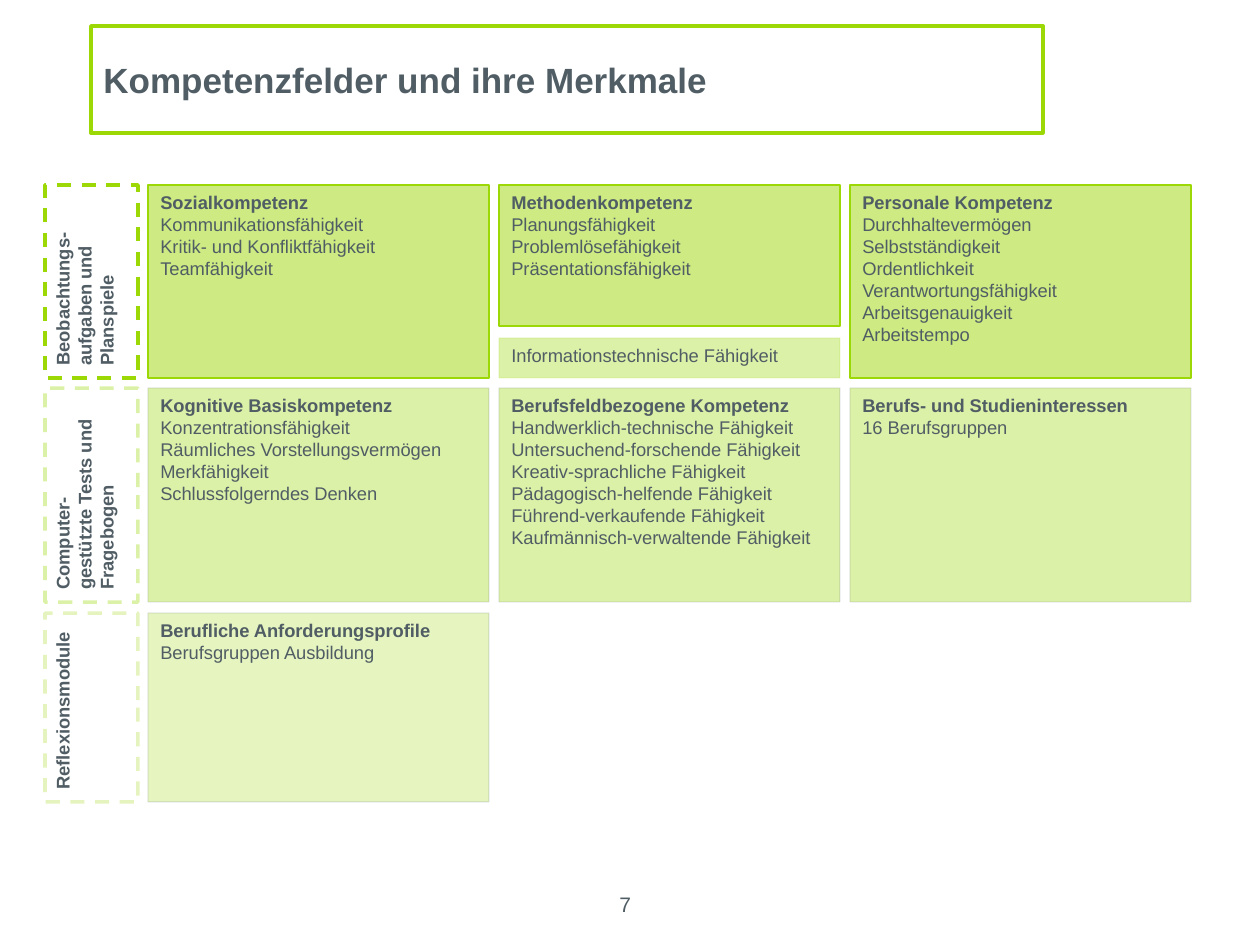
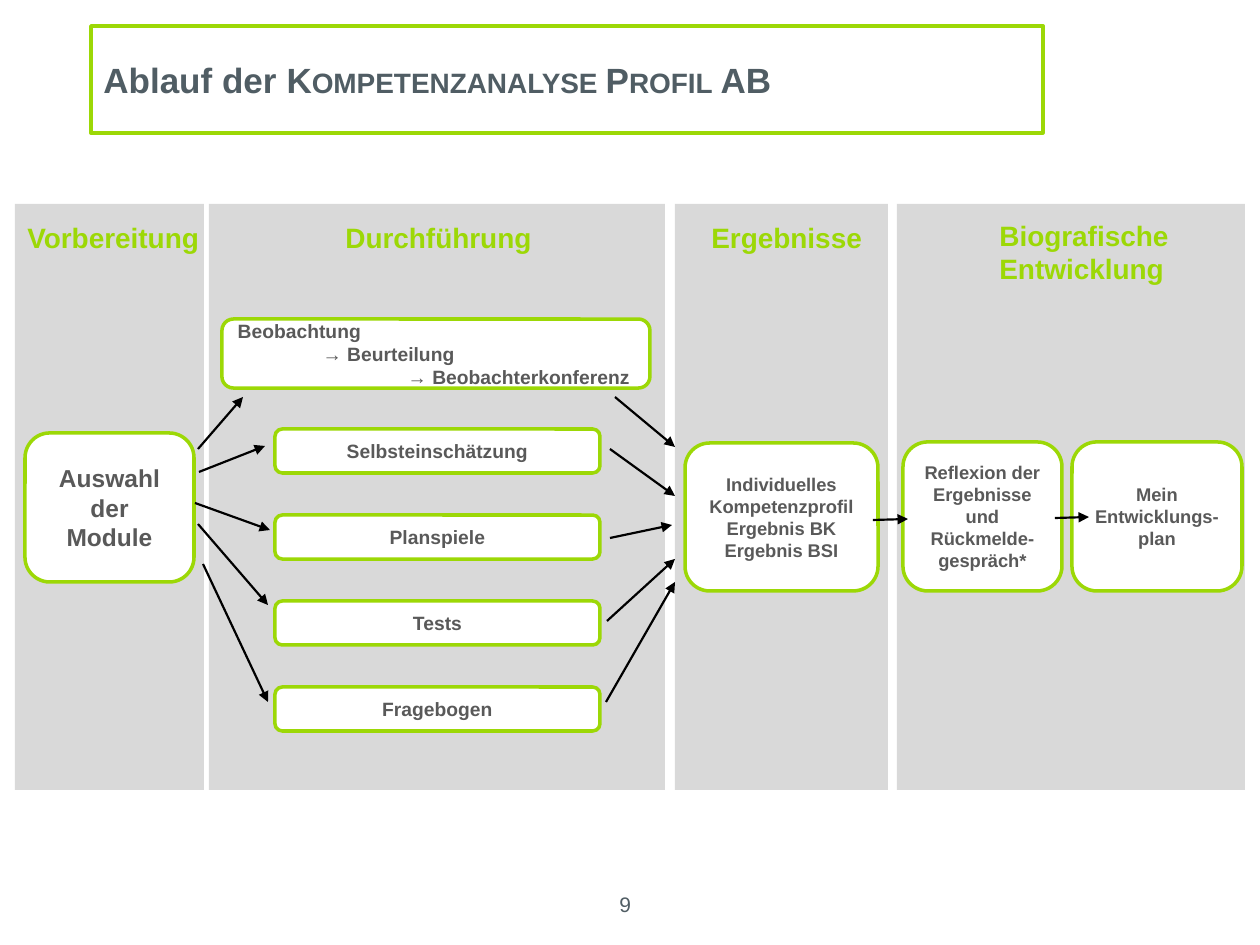
from lxml import etree
from pptx import Presentation
from pptx import util as u
from pptx.dml.color import RGBColor
from pptx.enum import dml, shapes, text
from pptx.oxml.ns import qn

SCALE = 914400 / 126  # EMU in one px
FONT = "Arial"
HUES = {
    "green": "9CD806",
    "slate": "505D64",
    "grey": "595959",
    "panel": "D9D9D9",
    "white": "FFFFFF",
    "black": "000000",
}
RECT = shapes.MSO_SHAPE.RECTANGLE
ROUND = shapes.MSO_SHAPE.ROUNDED_RECTANGLE
LEFT, MID = text.PP_ALIGN.LEFT, text.PP_ALIGN.CENTER
TOP, CENTRE = text.MSO_ANCHOR.TOP, text.MSO_ANCHOR.MIDDLE


def px(num):
    return u.Emu(round(num * SCALE))


def rgb(hue):
    return RGBColor.from_string(HUES[hue])


def paint(fill, root, route, hue, alpha=100):
    """Solid colour, with an opacity in percent."""
    fill.solid()
    fill.fore_color.rgb = rgb(hue)
    if alpha < 100:
        names = [qn("a:" + name) for name in route + ["solidFill", "srgbClr"]]
        tag = etree.SubElement(root.find("/".join(names)), qn("a:alpha"))
        tag.set("val", str(alpha * 1000))


def add_box(sld, box, kind=RECT, fill=None, edge=None, width=2, dash=False):
    """Shape in a px box; fill and edge are (colour, opacity) or None."""
    shape = sld.shapes.add_shape(kind, *map(px, box))
    shape.shadow.inherit = False
    root = shape._element.spPr
    if fill:
        paint(shape.fill, root, [], *fill)
    else:
        shape.fill.background()
    if edge:
        paint(shape.line.fill, root, ["ln"], *edge)
        shape.line.width = u.Pt(width)
        if dash:
            shape.line.dash_style = dml.MSO_LINE.DASH
    else:
        shape.line.fill.background()
    return shape


def write(shape, lines, size, hue, bold=True, align=LEFT, anchor=TOP, step=0):
    """One paragraph a line; step indents each line further than the last."""
    frame = shape.text_frame
    frame.word_wrap = True
    frame.vertical_anchor = anchor
    runs = []
    for i, line in enumerate(lines):
        para = frame.add_paragraph() if i else frame.paragraphs[0]
        para.alignment = align
        if step:
            para._p.get_or_add_pPr().set("marL", str(px(step * i)))
        runs.append(add_run(para, line, size, hue, bold))
    return runs


def add_run(para, words, size, hue, bold):
    run = para.add_run()
    run.text = words
    run.font.name, run.font.size, run.font.bold = FONT, u.Pt(size), bold
    run.font.color.rgb = rgb(hue)
    return run


def add_page(prs, title, number, small=""):
    """Blank slide with title frame and page number."""
    sld = prs.slides.add_slide(prs.slide_layouts[6])
    head = add_box(sld, (91, 26, 952, 107), edge=("green",))
    write(head, [title], 20, "slate", anchor=CENTRE)
    if small:
        run = add_run(head.text_frame.paragraphs[0], small, 20, "slate", True)
        run._r.get_or_add_rPr().set("cap", "small")
    foot = add_box(sld, (607, 882, 77, 45))
    write(foot, [number], 12, "slate", bold=False, anchor=CENTRE)
    return sld


# Fields of competence: label, top, height, opacity, cells
ROWS = [
    (["Beobachtungs-aufgaben und Planspiele"], 0, 193, 50, [
        ["Sozialkompetenz", "Kommunikationsfähigkeit",
         "Kritik- und Konfliktfähigkeit", "Teamfähigkeit"],
        ["Methodenkompetenz", "Planungsfähigkeit", "Problemlösefähigkeit",
         "Präsentationsfähigkeit"],
        ["Personale Kompetenz", "Durchhaltevermögen", "Selbstständigkeit",
         "Ordentlichkeit", "Verantwortungsfähigkeit", "Arbeitsgenauigkeit",
         "Arbeitstempo"]]),
    (["Computer-", "gestützte Tests und Fragebogen"], 203, 214, 35, [
        ["Kognitive Basiskompetenz", "Konzentrationsfähigkeit",
         "Räumliches Vorstellungsvermögen", "Merkfähigkeit",
         "Schlussfolgerndes Denken"],
        ["Berufsfeldbezogene Kompetenz", "Handwerklich-technische Fähigkeit",
         "Untersuchend-forschende Fähigkeit", "Kreativ-sprachliche Fähigkeit",
         "Pädagogisch-helfende Fähigkeit", "Führend-verkaufende Fähigkeit",
         "Kaufmännisch-verwaltende Fähigkeit"],
        ["Berufs- und Studieninteressen", "16 Berufsgruppen"]]),
    (["Reflexionsmodule"], 428, 189, 25, [
        ["Berufliche Anforderungsprofile", "Berufsgruppen Ausbildung"]]),
]
CELL, PITCH, INDENT = 341, 351, 103
EXTRA = 40  # height of the additional IT cell


def add_label(sld, box, lines, alpha):
    """Dashed row label that reads upwards."""
    left, top, wide, high = box
    spot = (left + (wide - high) / 2, top + (high - wide) / 2, high, wide)
    shape = add_box(sld, spot, edge=("green", alpha), dash=True)
    shape.rotation = 270
    write(shape, lines, 10.5, "slate")


def add_cell(sld, box, lines, alpha, edge):
    shape = add_box(sld, box, fill=("green", alpha), edge=edge, width=0.75)
    runs = write(shape, lines, 10.5, "slate", bold=False)
    runs[0].font.bold = len(lines) > 1


def add_row(sld, left, top, row):
    label, drop, high, alpha, cells = row
    y = top + drop
    first = drop == 0
    edge = ("green",) if first else ("slate", 13)
    add_label(sld, (left, y, 93, high), label, 100 if first else alpha)
    for i, lines in enumerate(cells):
        x = left + INDENT + PITCH * i
        split = first and i == 1
        tall = high - EXTRA - 12 if split else high
        add_cell(sld, (x, y, CELL, tall), lines, alpha, edge)
        if split:
            add_cell(sld, (x, y + high - EXTRA, CELL, EXTRA),
                     ["Informationstechnische Fähigkeit"], 35, ("green", 13))


def add_fields(prs):
    sld = add_page(prs, "Kompetenzfelder und ihre Merkmale", "7")
    for row in ROWS:
        add_row(sld, 45, 185, row)


# Phases: left, width, heading, heading box (x, y, width), all from the body
PHASES = [
    (0, 189, "Vorbereitung", (0, 10, 200)),
    (194, 456, "Durchführung", (124, 10, 218)),
    (660, 213, "Ergebnisse", (24, 10, 198)),
    (882, 348, "Biografische Entwicklung", (90, 8, 198)),
]
# Nodes: phase, box within the phase, lines, size
NODES = [
    (0, (10, 229, 169, 149), ["Auswahl der Module"], 14),
    (2, (10, 239, 193, 148), ["Individuelles", "Kompetenzprofil",
                              "Ergebnis BK", "Ergebnis BSI"], 10.5),
    (3, (6, 238, 159, 149),
     ["Reflexion der Ergebnisse und Rückmelde-gespräch*"], 10.5),
    (3, (175, 238, 170, 149), ["Mein Entwicklungs-plan"], 10.5),
]
WATCH = ["Beobachtung", "→ Beurteilung", "→ Beobachterkonferenz"]
STEPS = ["Selbsteinschätzung", "Planspiele", "Tests", "Fragebogen"]
NODES += [(1, (66, 225 + 86 * i, 325, 44), [step], 11)
          for i, step in enumerate(STEPS)]
# Arrows: from x, y to x, y, within the body
ARROWS = [
    (183, 245, 228, 193), (184, 268, 250, 242), (180, 299, 255, 326),
    (183, 320, 253, 401), (188, 360, 253, 498),
    (600, 193, 660, 243), (595, 245, 660, 292), (595, 334, 657, 321),
    (592, 417, 660, 355), (591, 498, 660, 378),
    (858, 316, 893, 315), (1040, 314, 1074, 313),
]


def add_phase(sld, box, title, spot):
    left, top = box[:2]
    add_box(sld, box, fill=("panel",))
    x, y, wide = spot
    head = add_box(sld, (left + x, top + y, wide, 47))
    write(head, [title], 16, "green")


def add_node(sld, left, top, box, lines, size, align=MID, step=0):
    x, y, wide, high = box
    shape = add_box(sld, (left + x, top + y, wide, high), ROUND,
                    fill=("white",), edge=("green",))
    write(shape, lines, size, "grey", align=align, anchor=CENTRE, step=step)


def add_arrow(sld, left, top, ends):
    x1, y1, x2, y2 = ends
    line = sld.shapes.add_connector(
        shapes.MSO_CONNECTOR.STRAIGHT, px(left + x1), px(top + y1),
        px(left + x2), px(top + y2))
    line.line.color.rgb = rgb("black")
    line.line.width = u.Pt(1.25)
    root = line._element.spPr
    etree.SubElement(root.find(qn("a:ln")), qn("a:tailEnd"), type="triangle")
    etree.SubElement(root, qn("a:effectLst"))


def add_flow(prs):
    sld = add_page(prs, "Ablauf der ", "9", "Kompetenzanalyse Profil AB")
    left, top, high = 15, 204, 586
    for x, wide, title, spot in PHASES:
        add_phase(sld, (left + x, top, wide, high), title, spot)
    for phase, box, lines, size in NODES:
        add_node(sld, left + PHASES[phase][0], top, box, lines, size)
    add_node(sld, left + PHASES[1][0], top, (13, 115, 428, 69), WATCH, 11,
             LEFT, 85)
    for ends in ARROWS:
        add_arrow(sld, left, top, ends)


def main():
    prs = Presentation()
    prs.slide_width, prs.slide_height = px(1260), px(945)
    add_fields(prs)
    add_flow(prs)
    prs.save("out.pptx")


if __name__ == "__main__":
    main()
